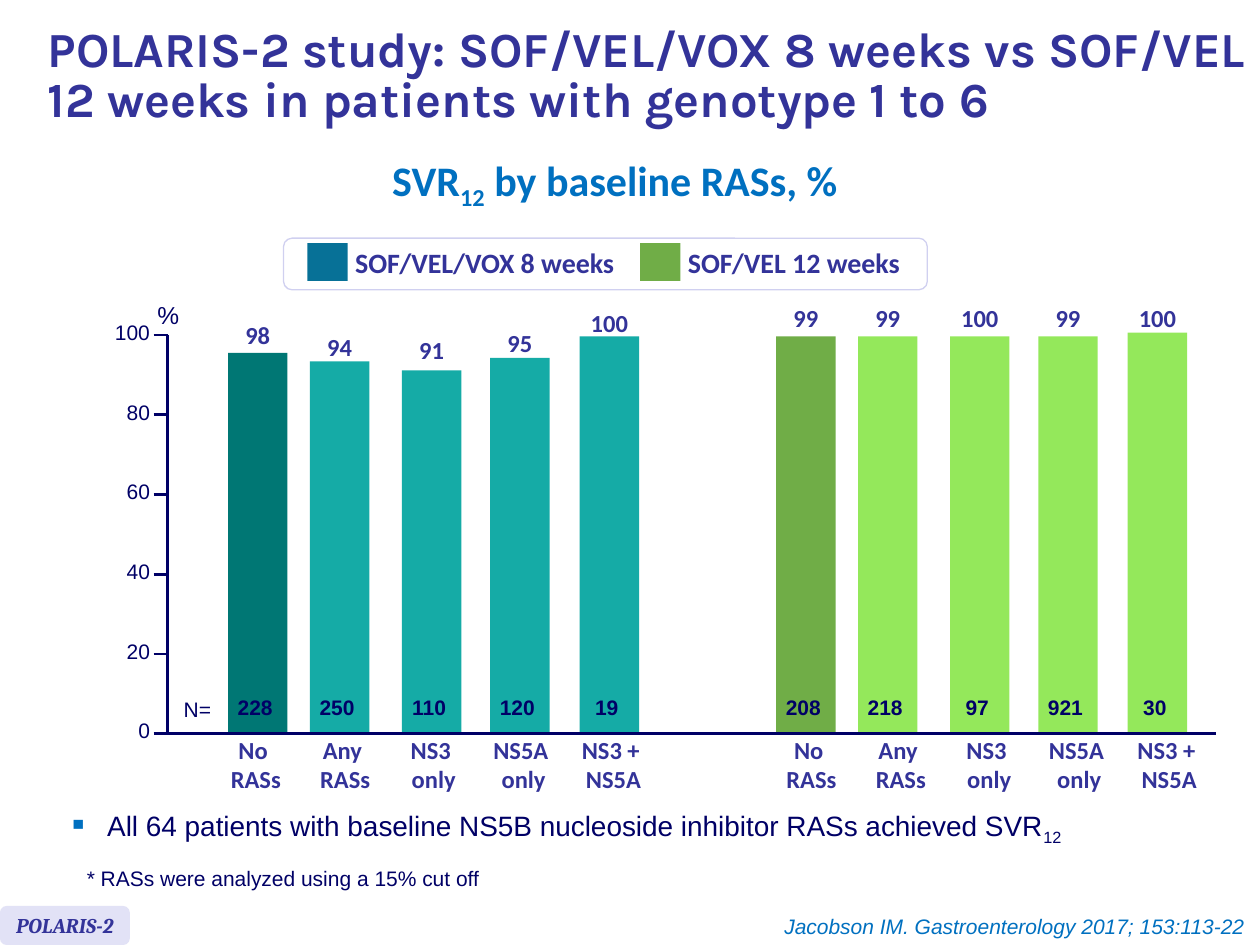
from dataclasses import dataclass

from lxml.etree import SubElement
from pptx import Presentation
from pptx.dml.color import RGBColor
from pptx.enum.shapes import MSO_CONNECTOR, MSO_SHAPE
from pptx.enum.text import MSO_ANCHOR, MSO_AUTO_SIZE, PP_ALIGN
from pptx.oxml.ns import qn
from pptx.util import Pt

COLORS = {
    "indigo": "333399", "navy": "000066", "blue": "0070C0", "white": "FFFFFF",
    "lavender": "E2E2F6", "outline": "D0D0F0", "legend_blue": "077197",
    "dark_teal": "007774", "teal": "15ABA6", "green": "70AD47", "lime": "94E85B",
}
BASELINE, AXIS_LEFT, AXIS_TOP, TICK_LEFT = 419.2, 95.8, 191.5, 87.8
BAR_WIDTH = 34
BAR_LEFTS = [130.3, 177.1, 229.7, 280.1, 331.2]
CATEGORIES = [
    ("No \nRASs", 146.2, 29), ("Any \nRASs", 197.3, 29), ("NS3\n only", 246.2, 29),
    ("NS5A \nonly", 299.2, 35), ("NS3 + \nNS5A", 350.6, 37),
]
ARMS = [
    {"bar_shift": 0, "label_shift": 0, "fills": ["dark_teal"] + ["teal"] * 4,
     "values": [98, 94, 91, 95, 100], "counts": [228, 250, 110, 120, 19],
     "tops": [201.6, 206.6, 211.7, 204.5, 192.2],
     "value_tops": [183.6, 190.1, 192.2, 187.9, 176.4]},
    {"bar_shift": 313.2, "label_shift": 317.5, "fills": ["green"] + ["lime"] * 4,
     "values": [99, 99, 100, 99, 100], "counts": [208, 218, 97, 921, 30],
     "tops": [192.2] * 4 + [190.1], "value_tops": [173.5] * 5},
]


@dataclass
class Style:
    """Look of one kind of text."""
    font: str
    size: float
    color: str
    bold: bool = False
    italic: bool = False
    align: PP_ALIGN = PP_ALIGN.LEFT
    spacing: object = None


HEADING = Style("Calibri", 24, "blue", True, align=PP_ALIGN.CENTER, spacing=Pt(15.2))
TITLE = Style("Karla", 28, "indigo", True, spacing=0.85)
CATEGORY = Style("Calibri", 14, "indigo", True, align=PP_ALIGN.CENTER)
VALUE = Style("Calibri", 14, "indigo", True, align=PP_ALIGN.CENTER, spacing=Pt(16.2))
COUNT = Style("Arial", 12, "navy", True, align=PP_ALIGN.CENTER, spacing=0.9)
TICK = Style("Arial", 12, "navy", align=PP_ALIGN.RIGHT)
UNIT = Style("Arial", 14, "navy")
NOTE = Style("Arial", 12, "navy")
BODY = Style("Arial", 16, "navy")
LEGEND = Style("Calibri", 16, "indigo", True)
BADGE = Style("Cambria", 12, "indigo", True, True, PP_ALIGN.CENTER)
CITATION = Style("Arial", 12, "blue", italic=True, align=PP_ALIGN.RIGHT)


def rgb(name):
    """Return the named colour."""
    return RGBColor.from_string(COLORS[name])


def add_bullet(para):
    """Give a paragraph a hanging square bullet."""
    properties = para._p.get_or_add_pPr()
    properties.set("marL", str(Pt(22.5)))
    properties.set("indent", str(-Pt(22.5)))
    color = SubElement(properties, qn("a:buClr"))
    SubElement(color, qn("a:srgbClr")).set("val", COLORS["blue"])
    SubElement(properties, qn("a:buChar")).set("char", "▪")


def write(frame, text, style, bullet=False):
    """Fill a text frame; parts between underscores become subscripts."""
    for index, line in enumerate(text.split("\n")):
        para = frame.paragraphs[0] if index == 0 else frame.add_paragraph()
        para.alignment = style.align
        if style.spacing is not None:
            para.line_spacing = style.spacing
        if bullet:
            add_bullet(para)
        font = para.font
        font.name, font.size = style.font, Pt(style.size)
        font.bold, font.italic = style.bold, style.italic
        font.color.rgb = rgb(style.color)
        for position, part in enumerate(line.split("_")):
            if part:
                span = para.add_run()
                span.text = part
                if position % 2:
                    span._r.get_or_add_rPr().set("baseline", "-25000")


def add_text(shapes, place, text, style, wrap=False, inset=True, middle=False,
             grow=True, bullet=False):
    """Add a text box at left, top, width, height."""
    box = shapes.add_textbox(*map(Pt, place))
    frame = box.text_frame
    frame.word_wrap = wrap
    frame.auto_size = MSO_AUTO_SIZE.SHAPE_TO_FIT_TEXT if grow else MSO_AUTO_SIZE.NONE
    if middle:
        frame.vertical_anchor = MSO_ANCHOR.MIDDLE
    if not inset:
        frame.margin_left = frame.margin_right = Pt(0)
        frame.margin_top = frame.margin_bottom = Pt(0)
    write(frame, text, style, bullet)


def add_block(shapes, place, fill, rounded=False, line=None):
    """Add a filled rectangle, square or rounded."""
    kind = MSO_SHAPE.ROUNDED_RECTANGLE if rounded else MSO_SHAPE.RECTANGLE
    block = shapes.add_shape(kind, *map(Pt, place))
    block.shadow.inherit = False
    block.fill.solid()
    block.fill.fore_color.rgb = rgb(fill)
    if line:
        block.line.color.rgb = rgb(line)
        block.line.width = Pt(0.75)
    else:
        block.line.fill.background()
    return block


def add_line(shapes, *ends):
    """Add an axis line from x, y to x, y."""
    line = shapes.add_connector(MSO_CONNECTOR.STRAIGHT, *map(Pt, ends))
    line.line.color.rgb = rgb("navy")
    line.line.width = Pt(1.5)
    SubElement(line._element.spPr, qn("a:effectLst"))


def add_axes(shapes):
    """Draw both axes with ticks and tick labels."""
    add_line(shapes, AXIS_LEFT, AXIS_TOP, AXIS_LEFT, BASELINE)
    add_line(shapes, TICK_LEFT, BASELINE, 694.8, BASELINE)
    for percent in range(0, 101, 20):
        y = BASELINE - (BASELINE - AXIS_TOP) * percent / 100
        if percent:
            add_line(shapes, TICK_LEFT, y, AXIS_LEFT, y)
        width = 6.7 * len(str(percent))
        add_text(shapes, (85.7 - width, y - 9, width, 14.4), str(percent), TICK, inset=False)
    add_text(shapes, (82.8, 167.8, 27.4, 21.6), "%", UNIT)
    add_text(shapes, (97.9, 394.6, 30.2, 21.6), "N=", NOTE)


def add_arm(shapes, arm):
    """Draw the bars of one treatment arm with their labels."""
    columns = zip(BAR_LEFTS, CATEGORIES, arm["fills"], arm["tops"], arm["values"],
                  arm["value_tops"], arm["counts"])
    for left, (name, center, width), fill, top, value, value_top, count in columns:
        left += arm["bar_shift"]
        middle = left + BAR_WIDTH / 2
        add_block(shapes, (left, top, BAR_WIDTH, BASELINE - top), fill)
        value_width = 7.2 * len(str(value))
        add_text(shapes, (middle - value_width / 2, value_top, value_width, 16.5),
                 str(value), VALUE, inset=False)
        add_text(shapes, (middle - 35.5, 394.6, 68, 20.9), str(count), COUNT,
                 wrap=True, middle=True)
        add_text(shapes, (center + arm["label_shift"] - width / 2, 419.8, width, 33.8),
                 name, CATEGORY, inset=False)


def add_legend(shapes):
    """Draw the grouped legend."""
    legend = shapes.add_group_shape().shapes
    add_block(legend, (162, 136.1, 367.9, 29.5), "white", True, "outline")
    entries = [("SOF/VEL/VOX 8 weeks", "legend_blue", 175.7, 200.9),
               ("SOF/VEL 12 weeks", "green", 365.8, 137.5)]
    for name, fill, left, width in entries:
        add_text(legend, (left + 20.2, 131.8, width, 36), name, LEGEND,
                 wrap=True, middle=True, grow=False)
        add_block(legend, (left, 139, 23, 21.6), fill)


def main():
    """Build and save the slide."""
    deck = Presentation()
    deck.slide_width, deck.slide_height = Pt(720), Pt(540)
    page = deck.slides.add_slide(deck.slide_layouts[6])
    shapes = page.shapes
    add_text(shapes, (20.2, 5.8, 708.5, 77), "POLARIS-2 study: SOF/VEL/VOX 8 weeks vs SOF/VEL "
             "12 weeks in patients with genotype 1 to 6", TITLE, wrap=True, middle=True, grow=False)
    add_text(shapes, (214.6, 102.2, 273.6, 25.2), "SVR_12_ by baseline RASs, %", HEADING)
    add_legend(shapes)
    for arm in ARMS:
        add_arm(shapes, arm)
    add_axes(shapes)
    add_text(shapes, (31.7, 458.6, 662.4, 26.6), "All 64 patients with baseline NS5B nucleoside "
             "inhibitor RASs achieved SVR_12_", BODY, wrap=True, bullet=True)
    add_text(shapes, (42.5, 491, 244.1, 21.6), "* RASs were analyzed using a 15% cut off", NOTE)
    badge = add_block(shapes, (0, 517.7, 74.2, 22.3), "lavender", True)
    badge.text_frame.word_wrap = False
    badge.text_frame.vertical_anchor = MSO_ANCHOR.MIDDLE
    write(badge.text_frame, "POLARIS-2", BADGE)
    add_text(shapes, (434.9, 518.4, 283.7, 21.6),
             "Jacobson IM. Gastroenterology 2017; 153:113-22", CITATION)
    deck.save("out.pptx")


if __name__ == "__main__":
    main()
